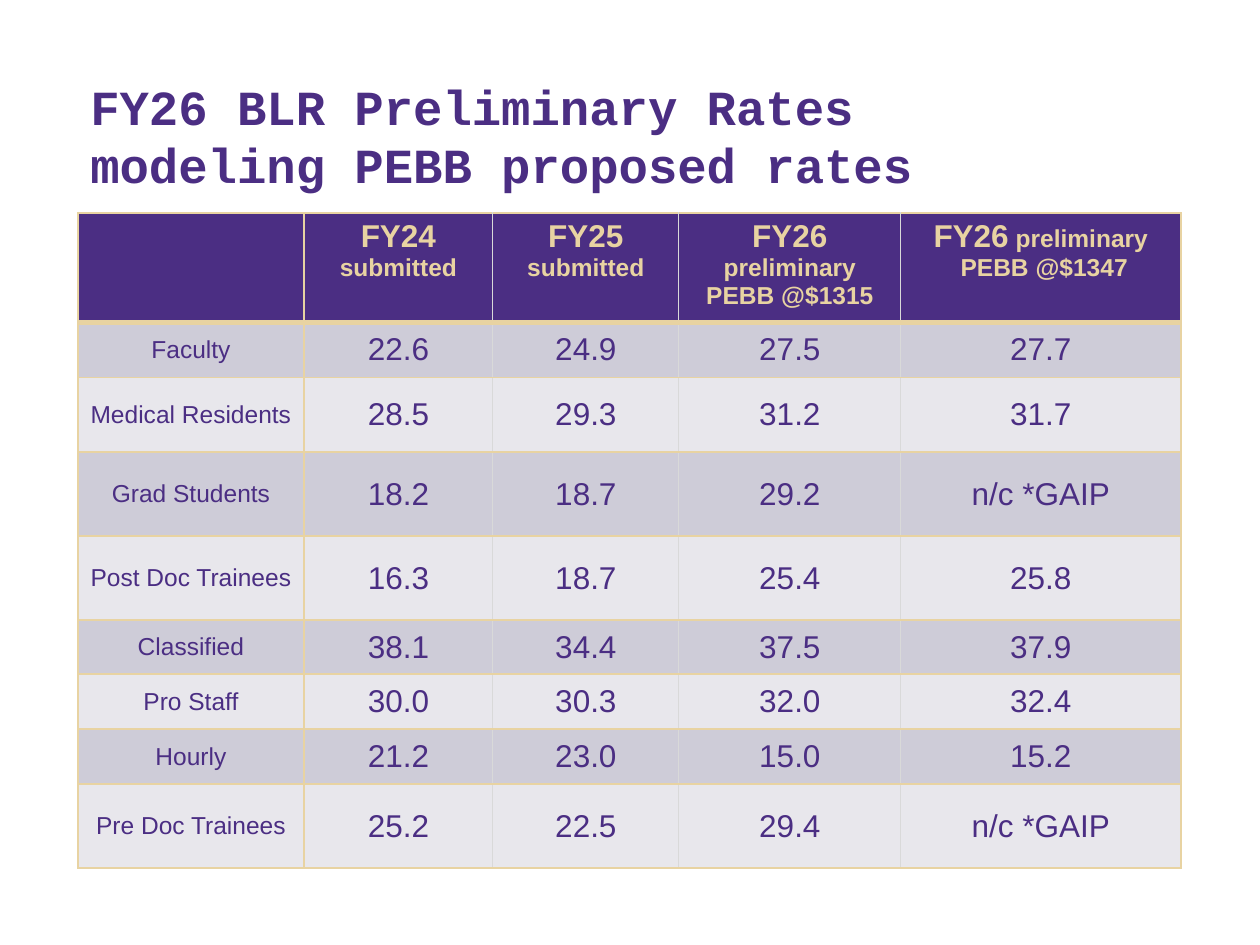
import pptx
import pptx.dml.color
import pptx.enum.text
import pptx.oxml.ns
import pptx.util
import lxml.etree

PX = 914400 // 126
PURPLE, GOLD, RULE = "4B2E83", "E8D3A2", "D9D9D9"
BANDS = ["CECCD8", "E8E7EC"]
ANCHOR = pptx.enum.text.MSO_ANCHOR
CENTER = pptx.enum.text.PP_ALIGN.CENTER


def color(value):
    return pptx.dml.color.RGBColor.from_string(value)


def write(para, text, size=18, font="Arial", fill=PURPLE, bold=False, align=None):
    para.alignment = align
    for index, line in enumerate(text.split("\n")):
        if index:
            para.add_line_break()
        span = para.add_run()
        span.text = line
        span.font.size = pptx.util.Pt(size)
        span.font.name = font
        span.font.bold = bold
        span.font.color.rgb = color(fill)


class RatesPage:
    def __init__(self, deck):
        self.page = deck.slides.add_slide(deck.slide_layouts[6])

    def title(self, left, top, width, height, text):
        box = self.page.shapes.add_textbox(left * PX, top * PX, width * PX, height * PX)
        frame = box.text_frame
        frame.word_wrap = True
        frame.vertical_anchor = ANCHOR.BOTTOM
        write(frame.paragraphs[0], text, size=28, font="Courier New", bold=True)

    def border(self, cell, side, value, points):
        properties = cell._tc.get_or_add_tcPr()
        tag = pptx.oxml.ns.qn
        line = lxml.etree.SubElement(properties, tag("a:ln" + side), w=str(pptx.util.Pt(points)))
        solid = lxml.etree.SubElement(line, tag("a:solidFill"))
        lxml.etree.SubElement(solid, tag("a:srgbClr"), val=value)

    def cell(self, cell, paragraphs, fill, borders, anchor=ANCHOR.MIDDLE):
        cell.vertical_anchor = anchor
        for side, (value, points) in borders.items():
            self.border(cell, side, value, points)
        cell.fill.solid()
        cell.fill.fore_color.rgb = color(fill)
        for index, spans in enumerate(paragraphs):
            frame = cell.text_frame
            para = frame.add_paragraph() if index else frame.paragraphs[0]
            for text, style in spans:
                write(para, text, align=CENTER, **style)

    def table(self, left, top, widths, heights, header, rows):
        shape = self.page.shapes.add_table(
            len(heights), len(widths), left * PX, top * PX, sum(widths) * PX, sum(heights) * PX)
        table = shape.table
        table.first_row = table.horz_banding = False
        for column, width in zip(table.columns, widths):
            column.width = width * PX
        for row, height in zip(table.rows, heights):
            row.height = height * PX
        last = len(widths) - 1
        for index in range(len(widths)):
            inner, outer, heavy = (RULE, 0.5), (GOLD, 1), (GOLD, 3)
            sides = {"L": outer if index < 2 else inner,
                     "R": outer if index in (0, last) else inner}
            self.cell(table.cell(0, index), header[index], PURPLE,
                      {**sides, "T": outer, "B": heavy}, ANCHOR.TOP)
            for number, values in enumerate(rows, 1):
                style = {"size": 18 if index else 14}
                borders = {**sides, "T": heavy if number == 1 else outer, "B": outer}
                self.cell(table.cell(number, index), [[(values[index], style)]],
                          BANDS[(number - 1) % 2], borders)


def main():
    deck = pptx.Presentation()
    deck.slide_width = pptx.util.Inches(10)
    deck.slide_height = pptx.util.Inches(7.5)
    page = RatesPage(deck)
    page.title(78, 116, 1200, 84, "FY26 BLR Preliminary Rates\nmodeling PEBB proposed rates")

    large = {"size": 18, "fill": GOLD, "bold": True}
    small = {**large, "size": 14}
    header = [
        [],
        [[("FY24", large)], [("submitted", small)]],
        [[("FY25 ", large), ("submitted", small)]],
        [[("FY26 ", large), ("preliminary PEBB @$1315", small)]],
        [[("FY26", large), (" preliminary", small)], [(" PEBB @$1347", small)]],
    ]
    rows = [
        ["Faculty", "22.6", "24.9", "27.5", "27.7"],
        ["Medical Residents", "28.5", "29.3", "31.2", "31.7"],
        ["Grad Students", "18.2", "18.7", "29.2", "n/c *GAIP"],
        ["Post Doc Trainees", "16.3", "18.7", "25.4", "25.8"],
        ["Classified", "38.1", "34.4", "37.5", "37.9"],
        ["Pro Staff", "30.0", "30.3", "32.0", "32.4"],
        ["Hourly", "21.2", "23.0", "15.0", "15.2"],
        ["Pre Doc Trainees", "25.2", "22.5", "29.4", "n/c *GAIP"],
    ]
    page.table(78, 213, [226, 189, 186, 222, 280],
               [103, 55, 75, 84, 84, 54, 55, 55, 84], header, rows)
    deck.save("out.pptx")


if __name__ == "__main__":
    main()
